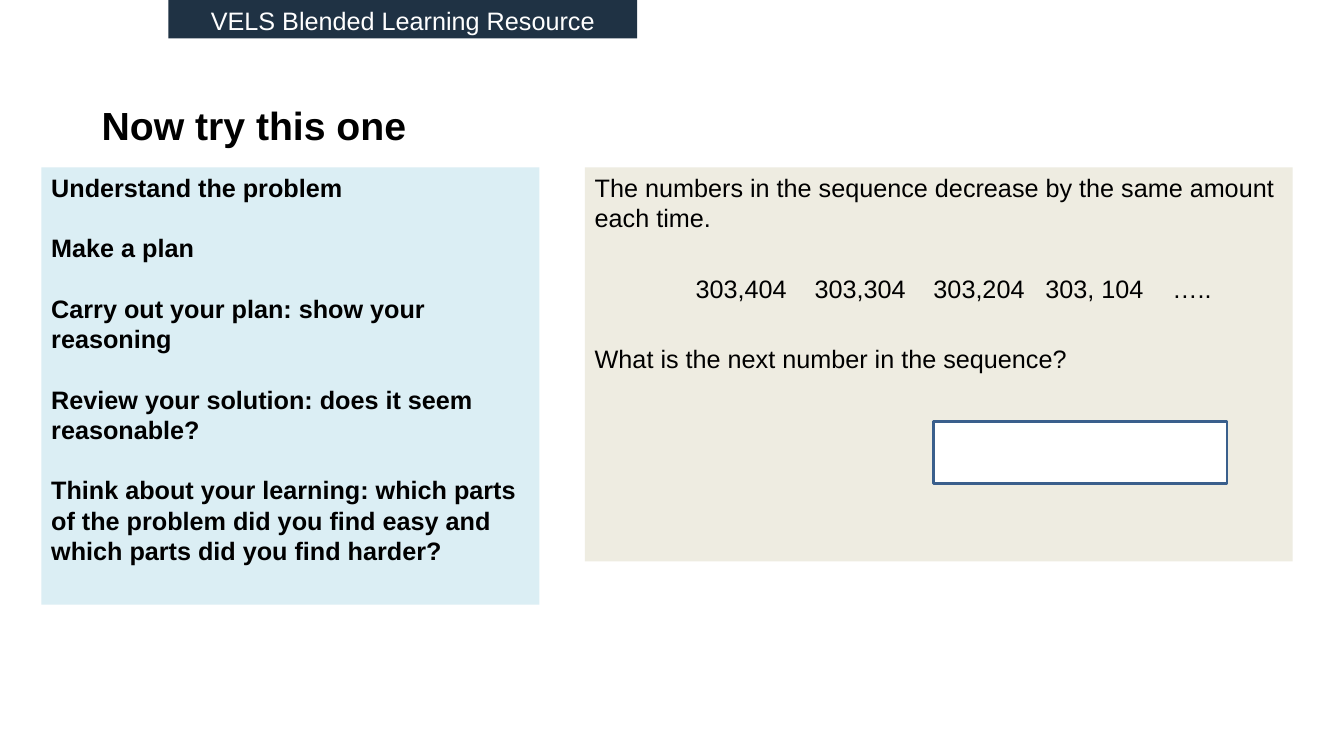
from dataclasses import dataclass
from typing import Any

from pptx import Presentation
from pptx.dml.color import RGBColor
from pptx.enum.shapes import MSO_SHAPE
from pptx.enum.text import MSO_ANCHOR, PP_ALIGN
from pptx.oxml.ns import qn
from pptx.util import Inches, Pt

RECT = MSO_SHAPE.RECTANGLE
TOP, MIDDLE = MSO_ANCHOR.TOP, MSO_ANCHOR.MIDDLE
LEFT, CENTER = PP_ALIGN.LEFT, PP_ALIGN.CENTER
BLACK, WHITE = "000000", "FFFFFF"


@dataclass(frozen=True)
class Box:
    left: float
    top: float
    width: float
    height: float
    lines: tuple[str, ...] = ()
    fill: str = ""
    edge: str = ""
    color: str = BLACK
    size: int = 18
    bold: bool = False
    align: Any = LEFT
    anchor: Any = TOP
    gap: float = 0
    tabs: tuple[float, ...] = ()


BOXES = (
    Box(0.91, 0.92, 9, 0.64, ("Now try this one",),
        size=28, bold=True, anchor=MIDDLE),
    Box(0.41, 1.66, 4.94, 4.34, (
        "Understand the problem",
        "Make a plan",
        "Carry out your plan: show your reasoning",
        "Review your solution: does it seem reasonable?",
        "Think about your learning: which parts of the problem "
        "did you find easy and which parts did you find harder?",
    ), fill="DBEEF4", bold=True, gap=21.6),
    Box(1.67, 0, 4.65, 0.38, ("VELS Blended Learning Resource",),
        fill="1F3244", color=WHITE, align=CENTER),
    Box(5.8, 1.66, 7.02, 3.91, (
        "The numbers in the sequence decrease by the same amount each time.",
        "\t303,404\t303,304\t303,204\t303, 104\t…..",
        "What is the next number in the sequence?",
    ), fill="EEECE1", gap=28.8, tabs=(1, 2.18, 3.36, 4.47, 5.73)),
    Box(9.26, 4.18, 2.91, 0.62, fill=WHITE, edge="3A5F8C"),
)


def rgb(code: str) -> RGBColor:
    return RGBColor.from_string(code)


def set_tabs(para: Any, stops: tuple[float, ...]) -> None:
    props = para._p.get_or_add_pPr()
    group = props.makeelement(qn("a:tabLst"), {})
    props.append(group)
    for stop in stops:
        group.append(group.makeelement(
            qn("a:tab"), {"pos": str(Inches(stop)), "algn": "l"}))


def write(frame: Any, box: Box) -> None:
    frame.word_wrap = True
    frame.vertical_anchor = box.anchor
    for index, line in enumerate(box.lines):
        para = frame.add_paragraph() if index else frame.paragraphs[0]
        para.alignment = box.align
        if index:
            para.space_before = Pt(box.gap)
        if "\t" in line:
            set_tabs(para, box.tabs)
        run = para.add_run()
        run.text = line
        font = run.font
        font.name, font.size, font.bold = "Arial", Pt(box.size), box.bold
        font.color.rgb = rgb(box.color)


def draw(slide: Any, box: Box) -> None:
    place = [Inches(n) for n in (box.left, box.top, box.width, box.height)]
    if box.fill:
        shape = slide.shapes.add_shape(RECT, *place)
        shape.shadow.inherit = False
        shape.fill.solid()
        shape.fill.fore_color.rgb = rgb(box.fill)
        if box.edge:
            shape.line.color.rgb = rgb(box.edge)
            shape.line.width = Pt(2)
        else:
            shape.line.fill.background()
    else:
        shape = slide.shapes.add_textbox(*place)
    write(shape.text_frame, box)


def main() -> None:
    deck = Presentation()
    deck.slide_width, deck.slide_height = Inches(13.33), Inches(7.5)
    slide = deck.slides.add_slide(deck.slide_layouts[6])
    for box in BOXES:
        draw(slide, box)
    deck.save("out.pptx")


if __name__ == "__main__":
    main()
